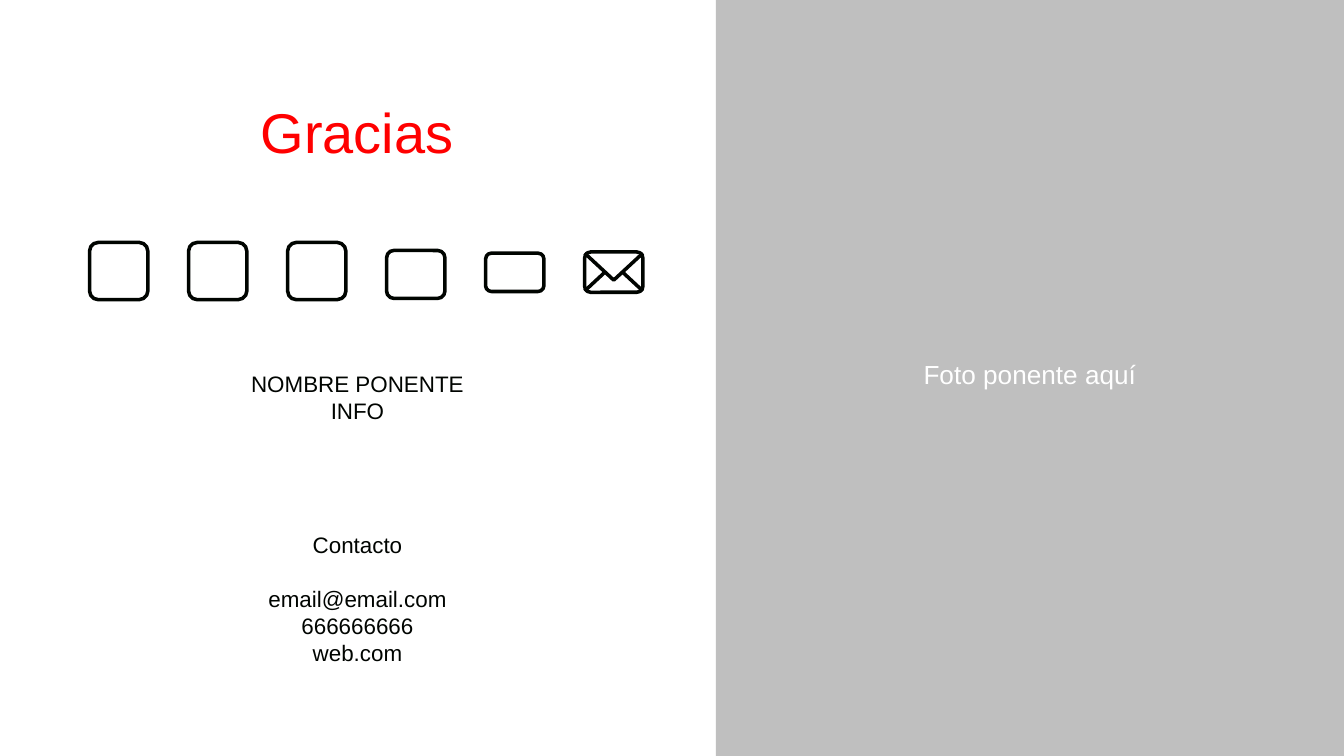
"""Build the closing slide with thanks, contact data and a photo area."""
from typing import NamedTuple

from pptx import Presentation
from pptx.dml.color import RGBColor
from pptx.enum.shapes import MSO_SHAPE
from pptx.enum.text import MSO_ANCHOR, PP_ALIGN
from pptx.util import Inches, Pt

RECT = MSO_SHAPE.RECTANGLE
ROUND = MSO_SHAPE.ROUNDED_RECTANGLE
MIDDLE = MSO_ANCHOR.MIDDLE
CENTER = PP_ALIGN.CENTER

WIDE = Inches(10)
HIGH = WIDE * 9 // 16
COLS = ROWS = 30
INK, RED, GRAY, WHITE = "000400", "FF0000", "BFBFBF", "FFFFFF"
LINE = 14.4
STROKE = Pt(1.9)


class Box(NamedTuple):
    """Place on the grid, in columns and rows."""
    col: float
    row: float
    cols: float
    rows: float

    def place(self) -> dict:
        """Return the place as shape attributes."""
        return {"left": round(WIDE * self.col / COLS),
                "top": round(HIGH * self.row / ROWS),
                "width": round(WIDE * self.cols / COLS),
                "height": round(HIGH * self.rows / ROWS)}


class Row(NamedTuple):
    """Line of text with the blank lines above it."""
    text: str
    gap: int = 0


class Icon(NamedTuple):
    """Vertical extent of an icon in the strip."""
    row: float
    rows: float


TITLE = Box(0.97, 3.15, 14, 4.1)
DATA = Box(2.48, 14.25, 11, 12.6)
PHOTO = Box(15.98, -0.3, 14.02, 30.3)
START, STEP, SPAN = 2, 2.21, 1.3
TALL = Icon(9.62, 2.27)
ICONS = [TALL, TALL, TALL, Icon(9.94, 1.9), Icon(10.05, 1.52), Icon(10, 1.6)]
FOLDS = [[(0, 0.03), (0.5, 0.7), (1, 0.03)],
         [(0, 0.97), (0.35, 0.5)],
         [(1, 0.97), (0.65, 0.5)]]
LINES = [Row("NOMBRE PONENTE"), Row("INFO"), Row("Contacto", 4),
         Row("email@email.com", 1), Row("666666666"), Row("web.com")]


def color(code: str) -> RGBColor:
    """Turn a hex string into a colour."""
    return RGBColor.from_string(code)


def apply(item, values: dict) -> None:
    """Set every attribute in the dict."""
    for name, value in values.items():
        setattr(item, name, value)


def write(shape, rows: list[Row], size: int, code: str) -> None:
    """Fill a shape with centred lines of text."""
    frame = shape.text_frame
    pad = Inches(0.1)
    apply(frame, {"word_wrap": True, "vertical_anchor": MIDDLE,
                  "margin_left": pad, "margin_right": pad,
                  "margin_top": pad, "margin_bottom": pad})
    frame.text = "\n".join(row.text for row in rows)
    for para, row in zip(frame.paragraphs, rows):
        apply(para, {"alignment": CENTER, "space_before": Pt(LINE * row.gap)})
        if len(rows) > 1:
            para.line_spacing = Pt(LINE)
        apply(para.runs[0].font, {"name": "Arial", "size": Pt(size)})
        para.runs[0].font.color.rgb = color(code)


def outline(shape) -> None:
    """Give a shape a dark line and no fill."""
    shape.shadow.inherit = False
    shape.fill.background()
    shape.line.color.rgb = color(INK)
    shape.line.width = STROKE


def frame(shapes, box: Box) -> None:
    """Draw the rounded frame of an icon."""
    shape = shapes.add_shape(ROUND, **box.place())
    shape.adjustments[0] = 0.15
    outline(shape)


def fold(shapes, box: Box) -> None:
    """Draw the folds of the envelope."""
    left, top, width, height = box.place().values()
    lines = [[(left + x * width, top + y * height) for x, y in line]
             for line in FOLDS]
    pen = shapes.build_freeform(*lines[0][0])
    pen.add_line_segments(lines[0][1:], close=False)
    for line in lines[1:]:
        pen.move_to(*line[0])
        pen.add_line_segments(line[1:], close=False)
    outline(pen.convert_to_shape())


def strip(shapes) -> None:
    """Draw the row of icons, with the envelope last."""
    boxes = [Box(START + STEP * i, icon.row, SPAN, icon.rows)
             for i, icon in enumerate(ICONS)]
    for box in boxes:
        frame(shapes, box)
    fold(shapes, boxes[-1])


def photo(shapes) -> None:
    """Draw the gray area for the photo."""
    shape = shapes.add_shape(RECT, **PHOTO.place())
    shape.shadow.inherit = False
    shape.fill.solid()
    shape.fill.fore_color.rgb = color(GRAY)
    shape.line.fill.background()
    write(shape, [Row("Foto ponente aquí")], 14, WHITE)


def main() -> None:
    """Build and save the slide."""
    deck = Presentation()
    apply(deck, {"slide_width": WIDE, "slide_height": HIGH})
    shapes = deck.slides.add_slide(deck.slide_layouts[5]).shapes
    apply(shapes.title, TITLE.place())
    write(shapes.title, [Row("Gracias")], 30, RED)
    write(shapes.add_textbox(**DATA.place()), LINES, 12, INK)
    strip(shapes)
    photo(shapes)
    deck.save("out.pptx")


if __name__ == "__main__":
    main()
